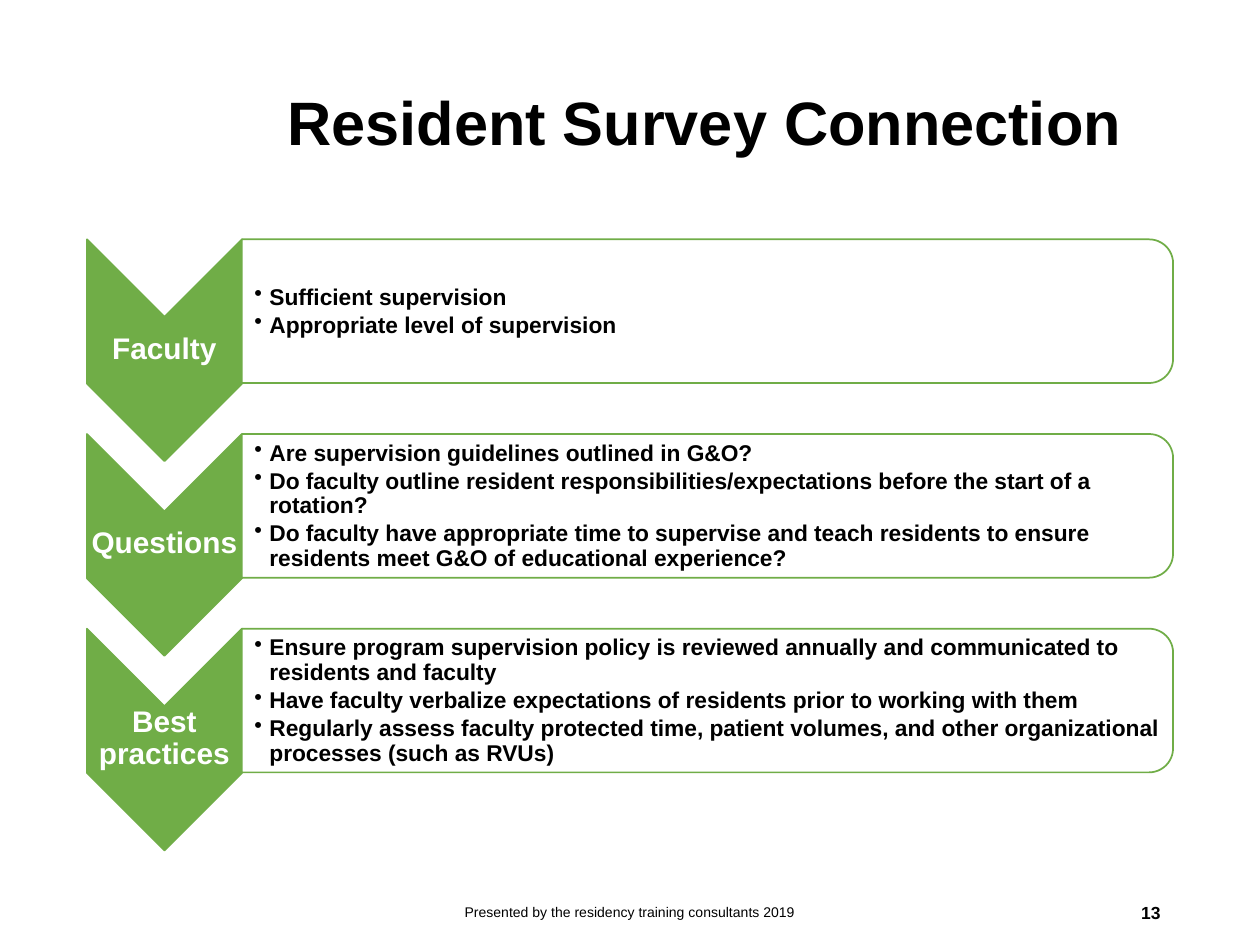
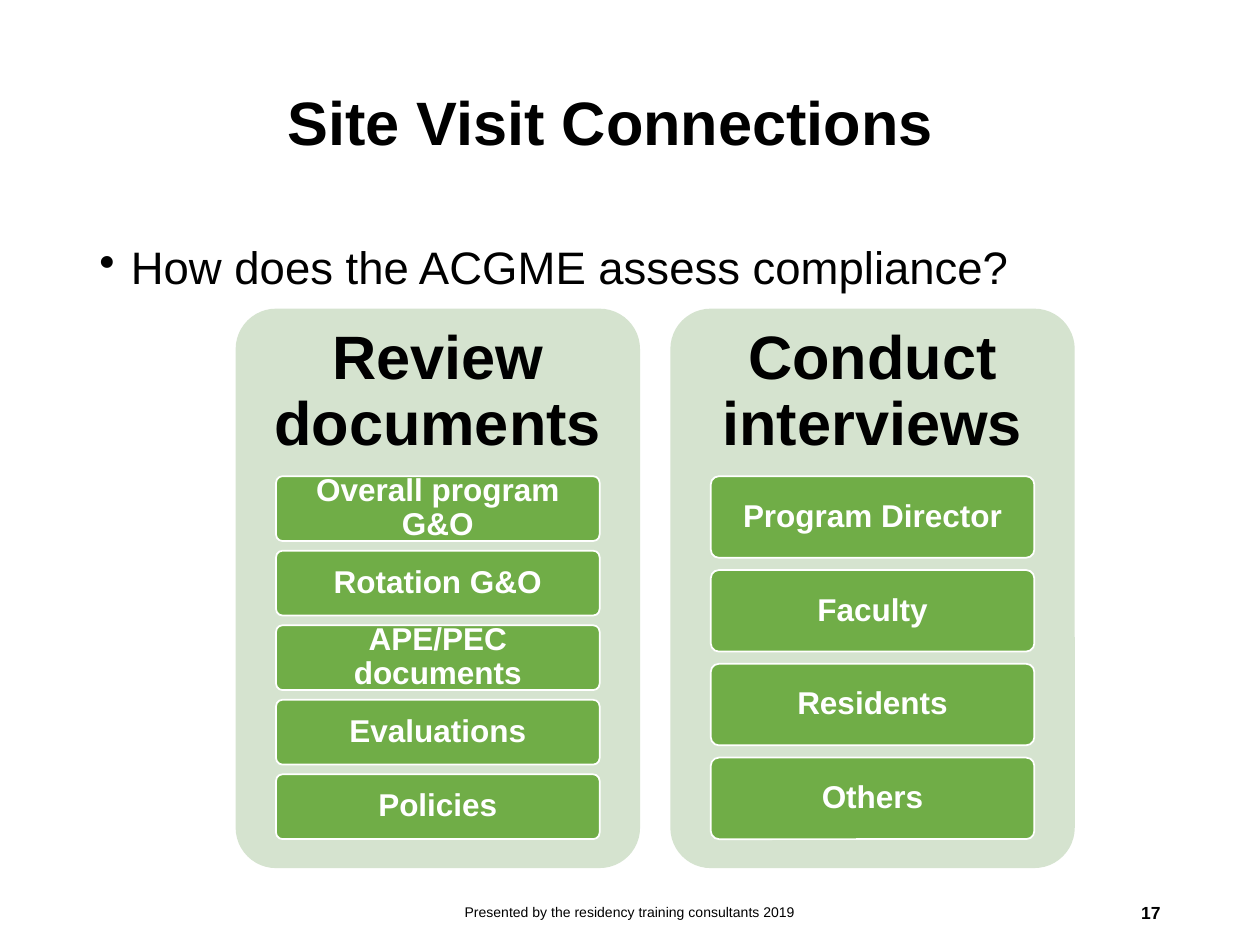
from dataclasses import dataclass

from lxml import etree
from pptx import Presentation
from pptx.dml.color import RGBColor
from pptx.enum.shapes import MSO_SHAPE
from pptx.enum.text import MSO_ANCHOR, MSO_AUTO_SIZE, PP_ALIGN
from pptx.oxml.ns import qn
from pptx.util import Inches, Pt

CHEVRON = MSO_SHAPE.CHEVRON
ROUND_RECT = MSO_SHAPE.ROUNDED_RECTANGLE
ROUND_TOP = MSO_SHAPE.ROUND_2_SAME_RECTANGLE
TOP, MIDDLE = MSO_ANCHOR.TOP, MSO_ANCHOR.MIDDLE
LEFT, CENTER, RIGHT = PP_ALIGN.LEFT, PP_ALIGN.CENTER, PP_ALIGN.RIGHT
TITLE_ONLY = 5


@dataclass(frozen=True)
class Theme:
    font: str = "Arial"
    black: str = "000000"
    white: str = "FFFFFF"
    green: str = "70AD47"
    pale_green: str = "D5E3CF"
    title: int = 35
    body: int = 26
    chip: int = 18
    stage: int = 17
    detail: int = 13
    number: int = 10
    footer: int = 8


THEME = Theme()
FOOTER = "Presented by the residency training consultants 2019"

STAGES = [
    ("Faculty", ["Sufficient supervision", "Appropriate level of supervision"]),
    ("Questions", [
        "Are supervision guidelines outlined in G&O?",
        "Do faculty outline resident responsibilities/expectations before the start of a rotation?",
        "Do faculty have appropriate time to supervise and teach residents to ensure "
        "residents meet G&O of educational experience?",
    ]),
    ("Best practices", [
        "Ensure program supervision policy is reviewed annually and communicated to "
        "residents and faculty",
        "Have faculty verbalize expectations of residents prior to working with them",
        "Regularly assess faculty protected time, patient volumes, and other "
        "organizational processes (such as RVUs)",
    ]),
]

PANELS = [
    ("Review documents", ["Overall program G&O", "Rotation G&O", "APE/PEC documents",
                          "Evaluations", "Policies"]),
    ("Conduct interviews", ["Program Director", "Faculty", "Residents", "Others"]),
]


# Text
def add_bullet(para, indent):
    properties = para._p.get_or_add_pPr()
    properties.set("marL", str(Inches(indent)))
    properties.set("indent", str(-Inches(indent)))
    etree.SubElement(properties, qn("a:buChar")).set("char", "•")


def write_text(shape, text, *, size, color=THEME.black, bold=False, align=LEFT,
               anchor=MIDDLE, insets=(0.1, 0.05, 0.1, 0.05), spacing=0.9,
               after=0, bullet_indent=None):
    """Fill a shape with one paragraph, or one for each item of a list."""
    frame = shape.text_frame
    frame.auto_size = MSO_AUTO_SIZE.NONE
    frame.word_wrap = True
    frame.vertical_anchor = anchor
    (frame.margin_left, frame.margin_top,
     frame.margin_right, frame.margin_bottom) = map(Inches, insets)
    lines = [text] if isinstance(text, str) else text
    for index, line in enumerate(lines):
        para = frame.paragraphs[0] if index == 0 else frame.add_paragraph()
        if bullet_indent:
            add_bullet(para, bullet_indent)
        para.alignment = align
        para.line_spacing = spacing
        para.space_after = Pt(after)
        span = para.add_run()
        span.text = line
        span.font.name = THEME.font
        span.font.size = Pt(size)
        span.font.bold = bold
        span.font.color.rgb = RGBColor.from_string(color)


def add_text(page, text, left, top, width, height, **style):
    box = page.shapes.add_textbox(*map(Inches, (left, top, width, height)))
    write_text(box, text, **style)


# Shapes
def add_block(page, kind, left, top, width, height, fill, line=None):
    block = page.shapes.add_shape(kind, *map(Inches, (left, top, width, height)))
    block.shadow.inherit = False
    block.fill.solid()
    block.fill.fore_color.rgb = RGBColor.from_string(fill)
    if line:
        block.line.color.rgb = RGBColor.from_string(line)
        block.line.width = Pt(1)
    else:
        block.line.fill.background()
    return block


def add_turned_block(page, kind, left, top, width, height, fill, line):
    """Place a block turned by 90 degrees so that it covers the given area."""
    shift = (width - height) / 2
    block = add_block(page, kind, left + shift, top - shift, height, width, fill, line)
    block.rotation = 90
    return block


def add_round_rect(page, left, top, width, height, fill, line=None):
    block = add_block(page, ROUND_RECT, left, top, width, height, fill, line)
    block.adjustments[0] = 0.1
    return block


# Page parts
def add_page(deck, title, number):
    page = deck.slides.add_slide(deck.slide_layouts[TITLE_ONLY])
    heading = page.shapes.title
    heading.left, heading.top = Inches(2.18), Inches(0.27)
    heading.width, heading.height = Inches(7.14), Inches(1.45)
    write_text(heading, title, size=THEME.title, bold=True)
    add_text(page, FOOTER, 3.31, 7.04, 3.38, 0.4,
             size=THEME.footer, align=CENTER, spacing=1)
    add_text(page, str(number), 7.06, 7.04, 2.25, 0.4,
             size=THEME.number, bold=True, align=RIGHT, spacing=1)
    return page


def add_stage(page, top, name, details):
    left, width, bar_height = 0.69, 1.23, 1.14
    tight = 0.01
    add_turned_block(page, CHEVRON, left, top, width, 1.76, THEME.green, THEME.green)
    add_text(page, name, left, top + 0.61, width, 0.53, size=THEME.stage,
             color=THEME.white, bold=True, align=CENTER, insets=(tight,) * 4)
    bar_left = left + width
    add_turned_block(page, ROUND_TOP, bar_left, top, 7.39, bar_height,
                     THEME.white, THEME.green)
    add_text(page, details, bar_left, top + 0.06, 7.34, bar_height - 0.11,
             size=THEME.detail, bold=True, after=2, bullet_indent=0.12,
             insets=(0.1, tight, tight, tight))


def add_panel(page, left, heading, items):
    top, width, heading_height = 2.45, 3.21, 1.33
    add_round_rect(page, left, top, width, 4.44, THEME.pale_green)
    add_text(page, heading, left, top, width, heading_height, size=THEME.title,
             bold=True, align=CENTER, insets=(0.15,) * 4)

    # Chips share a fixed height, with gaps in proportion to the chips
    chip_width, stack_height, gap_ratio = 0.8 * width, 2.88, 0.15
    count = len(items)
    chip_height = stack_height / (count + gap_ratio * (count - 1))
    for index, item in enumerate(items):
        chip_top = top + heading_height + index * chip_height * (1 + gap_ratio)
        chip = add_round_rect(page, left + 0.1 * width, chip_top, chip_width,
                              chip_height, THEME.green, THEME.white)
        write_text(chip, item, size=THEME.chip, color=THEME.white, bold=True,
                   align=CENTER, insets=(0.05, 0.04, 0.05, 0.04))


# Slides
def build_survey_page(deck):
    page = add_page(deck, "Resident Survey Connection", 13)
    for index, (name, details) in enumerate(STAGES):
        add_stage(page, 1.9 + index * 1.545, name, details)


def build_site_visit_page(deck):
    page = add_page(deck, "Site Visit Connections", 17)
    add_text(page, "How does the ACGME assess compliance?", 0.69, 1.9, 8.62, 0.5,
             size=THEME.body, anchor=TOP, bullet_indent=0.25)
    for index, (heading, items) in enumerate(PANELS):
        add_panel(page, 1.87 + index * 3.45, heading, items)


def main():
    deck = Presentation()
    deck.slide_width, deck.slide_height = Inches(10), Inches(7.5)
    build_survey_page(deck)
    build_site_visit_page(deck)
    deck.save("out.pptx")


if __name__ == "__main__":
    main()
